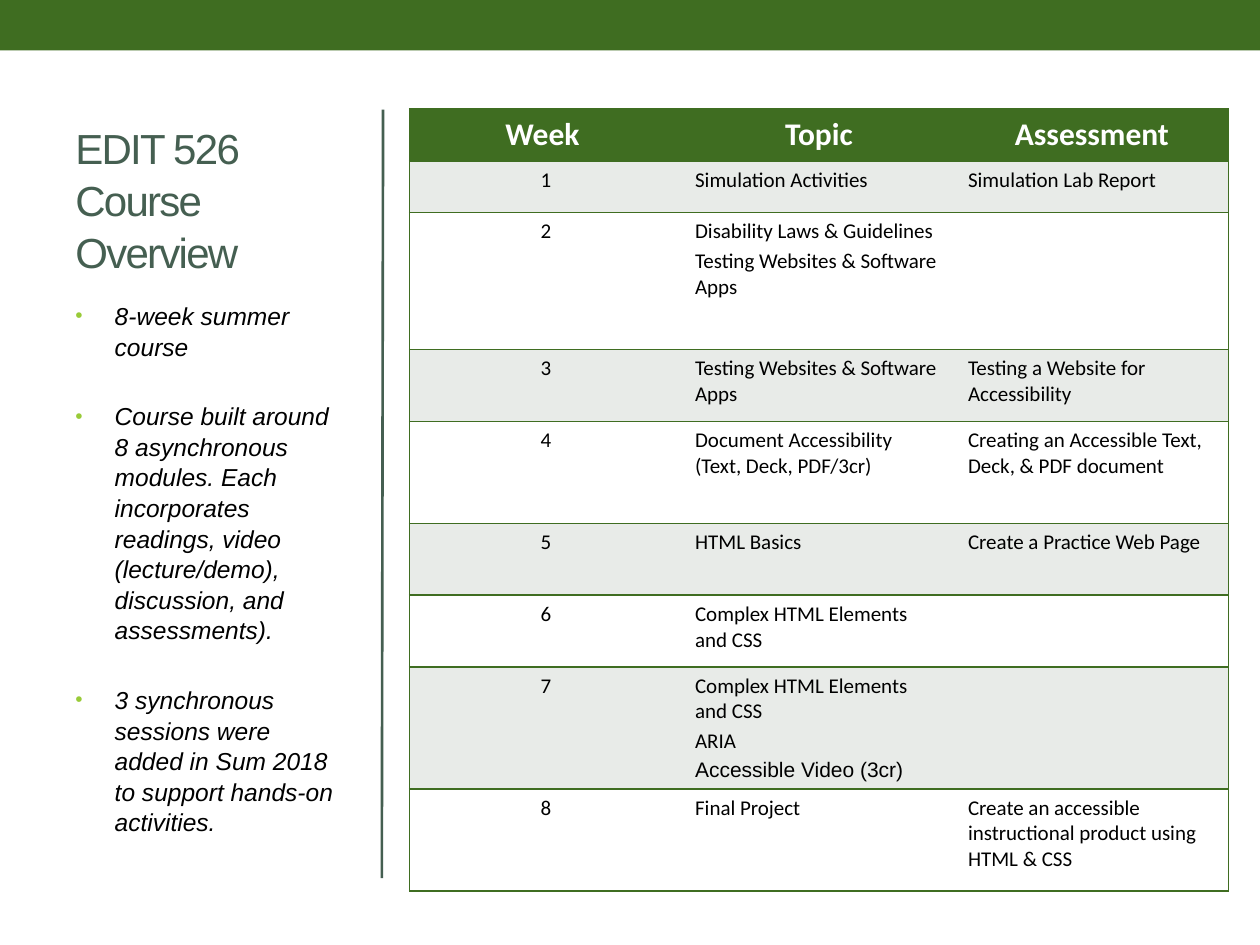
from lxml import etree
from pptx import Presentation
from pptx.dml.color import RGBColor
from pptx.enum import shapes, text
from pptx.oxml import ns
from pptx.util import Pt

GREEN, SLATE, LIME = "3F6D21", "455F51", "99CB38"
BAND, WHITE, BLACK = "E8EBE8", "FFFFFF", "000000"

BULLETS = [
    "8-week summer course",
    "Course built around 8 asynchronous modules. Each incorporates readings, "
    "video (lecture/demo), discussion, and assessments).",
    "3 synchronous sessions were added in Sum 2018 to support hands-on activities.",
]
HEADER = ["Week ", "Topic", "Assessment"]
ARIAL_TOPIC = "Accessible Video (3cr)"
# Row height, topics, assessment
WEEKS = [
    (29.5, ["Simulation Activities"], "Simulation Lab Report"),
    (78.5, ["Disability Laws & Guidelines", "Testing Websites & Software Apps"], ""),
    (41, ["Testing Websites & Software Apps"], "Testing a Website for Accessibility"),
    (58.3, ["Document Accessibility (Text, Deck, PDF/3cr)"],
     "Creating an Accessible Text, Deck, & PDF document"),
    (41, ["HTML Basics"], "Create a Practice Web Page"),
    (41, ["Complex HTML Elements and CSS"], ""),
    (62, ["Complex HTML Elements and CSS", "ARIA", ARIAL_TOPIC], ""),
    (58.3, ["Final Project"],
     "Create an accessible instructional product using HTML & CSS"),
]


def color(value):
    return RGBColor.from_string(value)


def sub(parent, tag, **attrs):
    return etree.SubElement(parent, ns.qn(tag), attrs)


def add_run(p, words, size, fill, font, bold=False, italic=False):
    r = p.add_run()
    r.text = words
    f = r.font
    f.size, f.name, f.bold, f.italic = Pt(size), font, bold, italic
    f.color.rgb = color(fill)
    return r


def add_bar(s, x, y, w, h, fill):
    sp = s.shapes.add_shape(shapes.MSO_SHAPE.RECTANGLE, Pt(x), Pt(y), Pt(w), Pt(h))
    sp.shadow.inherit = False
    sp.fill.solid()
    sp.fill.fore_color.rgb = color(fill)
    sp.line.fill.background()


def add_line(s, x1, y1, x2, y2, fill, width):
    line = s.shapes.add_connector(
        shapes.MSO_CONNECTOR.STRAIGHT, Pt(x1), Pt(y1), Pt(x2), Pt(y2))
    line.line.color.rgb = color(fill)
    line.line.width = Pt(width)
    sub(line._element.spPr, "a:effectLst")


def add_box(s, x, y, w, h, anchor):
    tf = s.shapes.add_textbox(Pt(x), Pt(y), Pt(w), Pt(h)).text_frame
    tf.word_wrap = True
    tf.vertical_anchor = anchor
    return tf


def add_title(s):
    p = add_box(s, 36, 62.6, 168.5, 99.4, text.MSO_ANCHOR.BOTTOM).paragraphs[0]
    p.line_spacing = 1.04
    for i, words in enumerate(["EDIT 526 ", "Course Overview"]):
        if i:
            p.add_line_break()
        r = add_run(p, words, 24, SLATE, "Arial")
        r.font._element.set("spc", "-100")


def add_bullets(s):
    tf = add_box(s, 36, 167.8, 168.5, 334, text.MSO_ANCHOR.TOP)
    for i, words in enumerate(BULLETS):
        p = tf.add_paragraph() if i else tf.paragraphs[0]
        p.line_spacing = 1.04
        p.space_before = Pt(22.4 if i else 0)
        pPr = p._p.get_or_add_pPr()
        pPr.set("marL", str(Pt(22.5)))
        pPr.set("indent", str(Pt(-22.5)))
        sub(sub(pPr, "a:buClr"), "a:srgbClr", val=LIME)
        sub(pPr, "a:buSzPct", val="85000")
        sub(pPr, "a:buFont", typeface="Arial")
        sub(pPr, "a:buChar", char="•")
        add_run(p, words, 14, BLACK, "Arial", italic=True)


def style_cell(cell, fill, sides):
    """Draw 1 pt borders on the given sides only, then fill the cell."""
    tcPr = cell._tc.get_or_add_tcPr()
    for side in "LRTB":
        ln = sub(tcPr, "a:ln" + side, w=str(Pt(1)))
        if side in sides:
            sub(sub(ln, "a:solidFill"), "a:srgbClr", val=GREEN)
        else:
            sub(ln, "a:noFill")
    cell.fill.solid()
    cell.fill.fore_color.rgb = color(fill)


def fill_cell(cell, lines, size, fill, centered, bold=False):
    for i, words in enumerate(lines):
        p = cell.text_frame.add_paragraph() if i else cell.text_frame.paragraphs[0]
        if centered:
            p.alignment = text.PP_ALIGN.CENTER
        if i:
            p.space_before = Pt(2.4)
        if words:
            font = "Arial" if words == ARIAL_TOPIC else "Calibri"
            add_run(p, words, size, fill, font, bold)


def add_schedule(s):
    rows = [(29.5, [[h] for h in HEADER])]
    rows += [(height, [[str(week)], topics, [task]])
             for week, (height, topics, task) in enumerate(WEEKS, 1)]
    table = s.shapes.add_table(len(rows), 3, Pt(234), Pt(62.4), Pt(468),
                               Pt(sum(height for height, _ in rows))).table
    table.horz_banding = False
    for i, (height, cells) in enumerate(rows):
        table.rows[i].height = Pt(height)
        head = i == 0
        back = GREEN if head else BAND if i % 2 else WHITE
        for j, lines in enumerate(cells):
            cell = table.cell(i, j)
            style_cell(cell, back, ("LTB", "TB", "RTB")[j])
            fill_cell(cell, lines, 18 if head else 12, WHITE if head else BLACK,
                      head or j == 0, head)


def main():
    prs = Presentation()
    prs.slide_width, prs.slide_height = Pt(720), Pt(540)
    s = prs.slides.add_slide(prs.slide_layouts[6])

    # Top band and divider
    add_bar(s, 0, 0, 720, 28.8, GREEN)
    add_line(s, 218.9, 62.6, 218.2, 501.8, SLATE, 1.5)

    # Left column
    add_title(s)
    add_bullets(s)

    # Weekly schedule
    add_schedule(s)
    prs.save("out.pptx")


if __name__ == "__main__":
    main()
